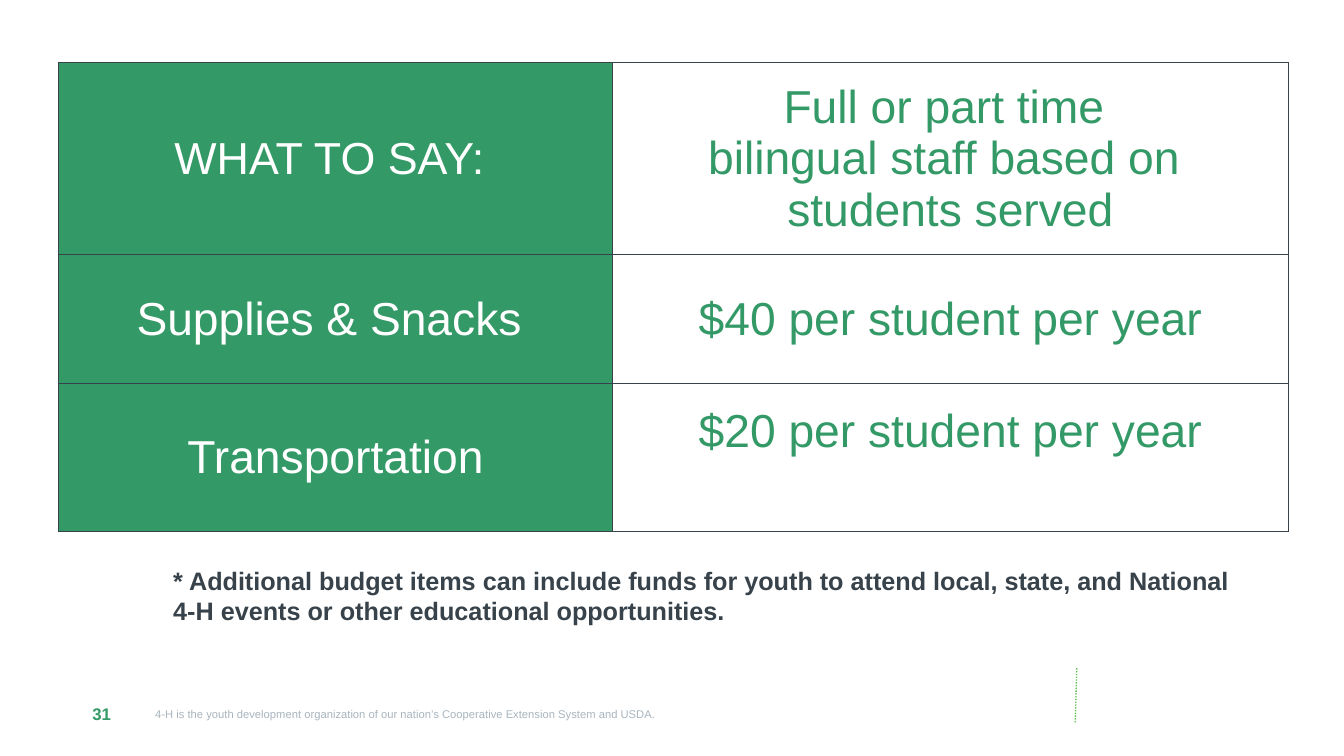
from lxml import etree
from pptx import Presentation
from pptx.dml.color import RGBColor
from pptx.enum.dml import MSO_LINE
from pptx.enum.shapes import MSO_CONNECTOR
from pptx.enum.text import MSO_ANCHOR, PP_ALIGN
from pptx.oxml.ns import qn
from pptx.util import Inches, Pt

LEFT, CENTER, RIGHT = PP_ALIGN.LEFT, PP_ALIGN.CENTER, PP_ALIGN.RIGHT
TOP, MIDDLE = MSO_ANCHOR.TOP, MSO_ANCHOR.MIDDLE
STRAIGHT, DOTTED = MSO_CONNECTOR.STRAIGHT, MSO_LINE.ROUND_DOT

COLORS = {"green": "339966", "white": "FFFFFF", "dark": "37424A",
          "gray": "A8B5BE", "lime": "61C250"}


class SlideBuilder:
    """Draws styled elements on one slide, placed on an 80 by 45 grid."""

    font = "Arial"
    columns, rows = 80, 45

    def __init__(self, prs):
        self.prs = prs
        self.s = prs.slides.add_slide(prs.slide_layouts[6])

    def x(self, cols):
        return round(self.prs.slide_width * cols / self.columns)

    def y(self, rows):
        return round(self.prs.slide_height * rows / self.rows)

    def paragraph(self, tf, text, size, color, bold=False, align=LEFT):
        tf.word_wrap = True
        p = tf.paragraphs[0]
        p.text = text
        p.alignment = align
        p.font.name, p.font.size, p.font.bold = self.font, Pt(size), bold
        p.font.color.rgb = RGBColor.from_string(COLORS[color])

    def text(self, left, top, width, height, text, size, color, bold=False,
             align=LEFT, anchor=TOP, insets=(0.1, 0.1)):
        sp = self.s.shapes.add_textbox(self.x(left), self.y(top),
                                       self.x(width), self.y(height))
        tf = sp.text_frame
        tf.vertical_anchor = anchor
        tf.margin_left, tf.margin_right = map(Inches, insets)
        self.paragraph(tf, text, size, color, bold, align)

    def line(self, x1, y1, x2, y2, color):
        cxn = self.s.shapes.add_connector(STRAIGHT, self.x(x1), self.y(y1),
                                          self.x(x2), self.y(y2))
        cxn.line.color.rgb = RGBColor.from_string(COLORS[color])
        cxn.line.width, cxn.line.dash_style = Pt(1), DOTTED
        etree.SubElement(cxn._element.spPr, qn("a:effectLst"))

    def borders(self, cell, color):
        tcPr = cell._tc.get_or_add_tcPr()
        for side in ("lnL", "lnR", "lnT", "lnB"):
            ln = etree.SubElement(tcPr, qn(f"a:{side}"), w=str(Pt(1)))
            fill = etree.SubElement(ln, qn("a:solidFill"))
            etree.SubElement(fill, qn("a:srgbClr"), val=COLORS[color])

    def cell(self, cell, text, size, color, fill=None, bottom=0.08):
        cell.margin_left = cell.margin_right = Inches(0.12)
        cell.margin_top, cell.margin_bottom = Inches(0.08), Inches(bottom)
        cell.vertical_anchor = MIDDLE
        self.paragraph(cell.text_frame, text, size, color, align=CENTER)
        self.borders(cell, "dark")
        if fill:
            cell.fill.solid()
            cell.fill.fore_color.rgb = RGBColor.from_string(COLORS[fill])
        else:
            cell.fill.background()

    def table(self, left, top, widths, heights, entries):
        tbl = self.s.shapes.add_table(
            len(heights), len(widths), self.x(left), self.y(top),
            self.x(sum(widths)), self.y(sum(heights))).table
        tbl.first_row = tbl.horz_banding = False
        for col, width in zip(tbl.columns, widths):
            col.width = self.x(width)
        for row, height, (label, size, value, bottom) in zip(
                tbl.rows, heights, entries):
            row.height = self.y(height)
            self.cell(row.cells[0], label, size, "white", "green")
            self.cell(row.cells[1], value, 33, "green", bottom=bottom)


def main():
    prs = Presentation()
    prs.slide_width, prs.slide_height = Inches(13.33), Inches(7.5)
    b = SlideBuilder(prs)
    b.text(8.15, 41.28, 31.5, 2.45,
           "4-H is the youth development organization of our nation’s "
           "Cooperative Extension System and USDA.",
           8, "gray", align=RIGHT, anchor=MIDDLE, insets=(0, 0.1))
    b.line(64, 43, 64.1, 39.7, "lime")
    b.text(5.5, 41.28, 2.6, 2.45, "31", 12, "green", bold=True,
           anchor=MIDDLE, insets=(0, 0))
    b.table(3.5, 3.72, (32.95, 40.25), (11.45, 7.65, 8.8), [
        ("WHAT TO SAY: ", 32,
         "Full or part time \vbilingual staff based on \vstudents served", 0.08),
        ("Supplies & Snacks ", 33, "$40 per student per year", 0.08),
        ("Transportation", 33, "$20 per student per year", 0.6),
    ])
    b.text(9.72, 33.35, 64.45, 6.05,
           "* Additional budget items can include funds for youth to attend "
           "local, state, and National 4-H events or other educational "
           "opportunities.", 18, "dark", bold=True)
    prs.save("out.pptx")


if __name__ == "__main__":
    main()
